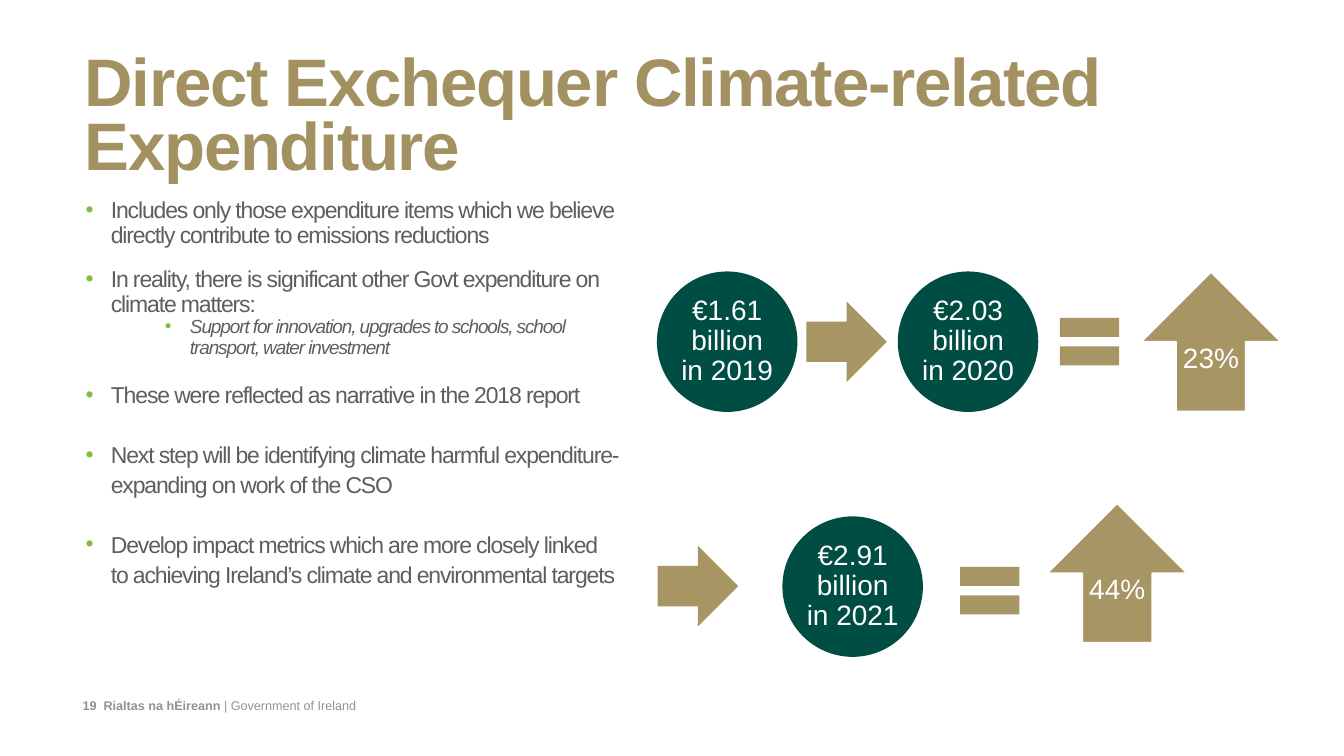
from lxml import etree
from pptx import Presentation
from pptx.dml.color import RGBColor
from pptx.enum.shapes import MSO_SHAPE
from pptx.enum.text import MSO_ANCHOR, MSO_AUTO_SIZE, PP_ALIGN
from pptx.oxml.ns import qn
from pptx.util import Inches, Pt

CIRCLE, NEXT = MSO_SHAPE.OVAL, MSO_SHAPE.RIGHT_ARROW
EQUALS, RISE = MSO_SHAPE.MATH_EQUAL, MSO_SHAPE.UP_ARROW
TOP, MIDDLE = MSO_ANCHOR.TOP, MSO_ANCHOR.MIDDLE
CENTER, LEFT = PP_ALIGN.CENTER, PP_ALIGN.LEFT
NO_FIT = MSO_AUTO_SIZE.NONE

THEME = {
    "font": "Arial",
    "title": "A39161", "body": "5E5E5E", "bullet": "83BE41", "footer": "929292",
    "green": "004D44", "gold": "A79563", "white": "FFFFFF",
    "title_size": 96, "body_size": 32.8, "sub_size": 27.1,
    "figure_size": 40, "footer_size": 18,
    "title_spacing": -1.8, "body_spacing": -1.6,
}

TITLE = "Direct Exchequer Climate-related Expenditure"
# level, line spacing, space before in points, text
POINTS = [
    (1, 0.9, 0, "Includes only those expenditure items which we believe directly contribute to emissions reductions"),
    (1, 0.9, 28, "In reality, there is significant other Govt expenditure on climate matters:"),
    (2, 0.9, 0, "Support for innovation, upgrades to schools, school transport, water investment"),
    (1, 1.1, 28, "These were reflected as narrative in the 2018 report"),
    (1, 1.1, 42, "Next step will be identifying climate harmful expenditure- expanding on work of the CSO"),
    (1, 1.1, 42, "Develop impact metrics which are more closely linked to achieving Ireland’s climate and environmental targets"),
]
FOOTER = [("19  Rialtas na hÉireann ", True), ("| Government of Ireland", False)]
# kind, left, vertical centre, text
FLOW = [
    (CIRCLE, 13.05, 6.78, "€1.61 billion in 2019"),
    (NEXT, 16, 6.78, ""),
    (CIRCLE, 17.83, 6.78, "€2.03 billion in 2020"),
    (EQUALS, 20.82, 6.78, ""),
    (RISE, 22.65, 6.78, "23%"),
    (NEXT, 13.05, 11.63, ""),
    (CIRCLE, 15.54, 11.64, "€2.91 billion in 2021"),
    (EQUALS, 18.84, 11.72, ""),
    (RISE, 20.79, 11.37, "44%"),
]
# size, fill, outline
STYLES = {
    CIRCLE: (2.76, "green", "green"),
    NEXT: (1.6, "gold", None),
    EQUALS: (1.6, "gold", None),
    RISE: (2.76, "gold", "white"),
}
INDENTS = {1: 0.5, 2: 2.07}
HANGING = 0.5
INSET = 0.06


def color(name):
    return RGBColor.from_string(THEME[name])


def style_run(run, size, color_name, bold=False, italic=False, spacing=0):
    font = run.font
    font.name, font.size = THEME["font"], Pt(THEME[size])
    font.bold, font.italic = bold, italic
    font.color.rgb = color(color_name)
    if spacing:
        run._r.get_or_add_rPr().set("spc", str(round(spacing * 100)))


def place(holder, left, top, width, height):
    holder.left, holder.top = Inches(left), Inches(top)
    holder.width, holder.height = Inches(width), Inches(height)
    frame = holder.text_frame
    frame.auto_size, frame.vertical_anchor, frame.word_wrap = NO_FIT, TOP, True
    frame.margin_left = frame.margin_right = Inches(0.1)
    frame.margin_top = frame.margin_bottom = Inches(0.05)
    return frame


def set_insets(frame):
    frame.margin_left = frame.margin_right = Inches(INSET)
    frame.margin_top = frame.margin_bottom = Inches(INSET)
    frame.vertical_anchor = MIDDLE


def add_bullet(paragraph, indent):
    props = paragraph._p.get_or_add_pPr()
    props.set("marL", str(Inches(indent)))
    props.set("indent", str(-Inches(HANGING)))
    bullet_color = etree.SubElement(props, qn("a:buClr"))
    etree.SubElement(bullet_color, qn("a:srgbClr"), val=THEME["bullet"])
    etree.SubElement(props, qn("a:buFont"), typeface=THEME["font"])
    etree.SubElement(props, qn("a:buChar"), char="•")


def add_title(slide):
    frame = place(slide.shapes.title, 1.58, 1.03, 21.13, 2.5)
    frame.text = TITLE
    heading = frame.paragraphs[0]
    heading.alignment, heading.line_spacing = LEFT, 0.8
    heading.space_before = Pt(0)
    style_run(heading.runs[0], "title_size", "title", bold=True,
              spacing=THEME["title_spacing"])


def add_points(slide):
    frame = place(slide.placeholders[1], 1.6, 3.89, 10.78, 9.45)
    frame.text = "\n".join(point[-1] for point in POINTS)
    for paragraph, (level, line_spacing, before, _) in zip(frame.paragraphs, POINTS):
        is_sub = level == 2
        paragraph.level = level
        add_bullet(paragraph, INDENTS[level])
        paragraph.alignment, paragraph.line_spacing = LEFT, line_spacing
        paragraph.space_before, paragraph.space_after = Pt(before), Pt(0)
        style_run(paragraph.runs[0], "sub_size" if is_sub else "body_size", "body",
                  italic=is_sub, spacing=THEME["body_spacing"])


def add_footer(slide):
    footer = slide.shapes.add_textbox(Inches(1.58), Inches(13.79), Inches(5.62), Inches(0.42))
    set_insets(footer.text_frame)
    footer.text_frame.word_wrap = False
    for text, bold in FOOTER:
        run = footer.text_frame.paragraphs[0].add_run()
        run.text = text
        style_run(run, "footer_size", "footer", bold=bold)


def add_flow(slide):
    for kind, left, centre, text in FLOW:
        size, fill, outline = STYLES[kind]
        step = slide.shapes.add_shape(kind, Inches(left), Inches(centre - size / 2),
                                      Inches(size), Inches(size))
        step.shadow.inherit = False
        step.fill.solid()
        step.fill.fore_color.rgb = color(fill)
        if outline:
            step.line.color.rgb = color(outline)
            step.line.width = Pt(2)
        else:
            step.line.fill.background()
        if text:
            frame = step.text_frame
            set_insets(frame)
            frame.word_wrap = True
            frame.text = text
            figure = frame.paragraphs[0]
            figure.alignment, figure.line_spacing = CENTER, 0.9
            style_run(figure.runs[0], "figure_size", "white")


def main():
    deck = Presentation()
    deck.slide_width, deck.slide_height = Inches(26.67), Inches(15)
    slide = deck.slides.add_slide(deck.slide_layouts[1])
    add_footer(slide)
    add_title(slide)
    add_points(slide)
    add_flow(slide)
    deck.save("out.pptx")


if __name__ == "__main__":
    main()
